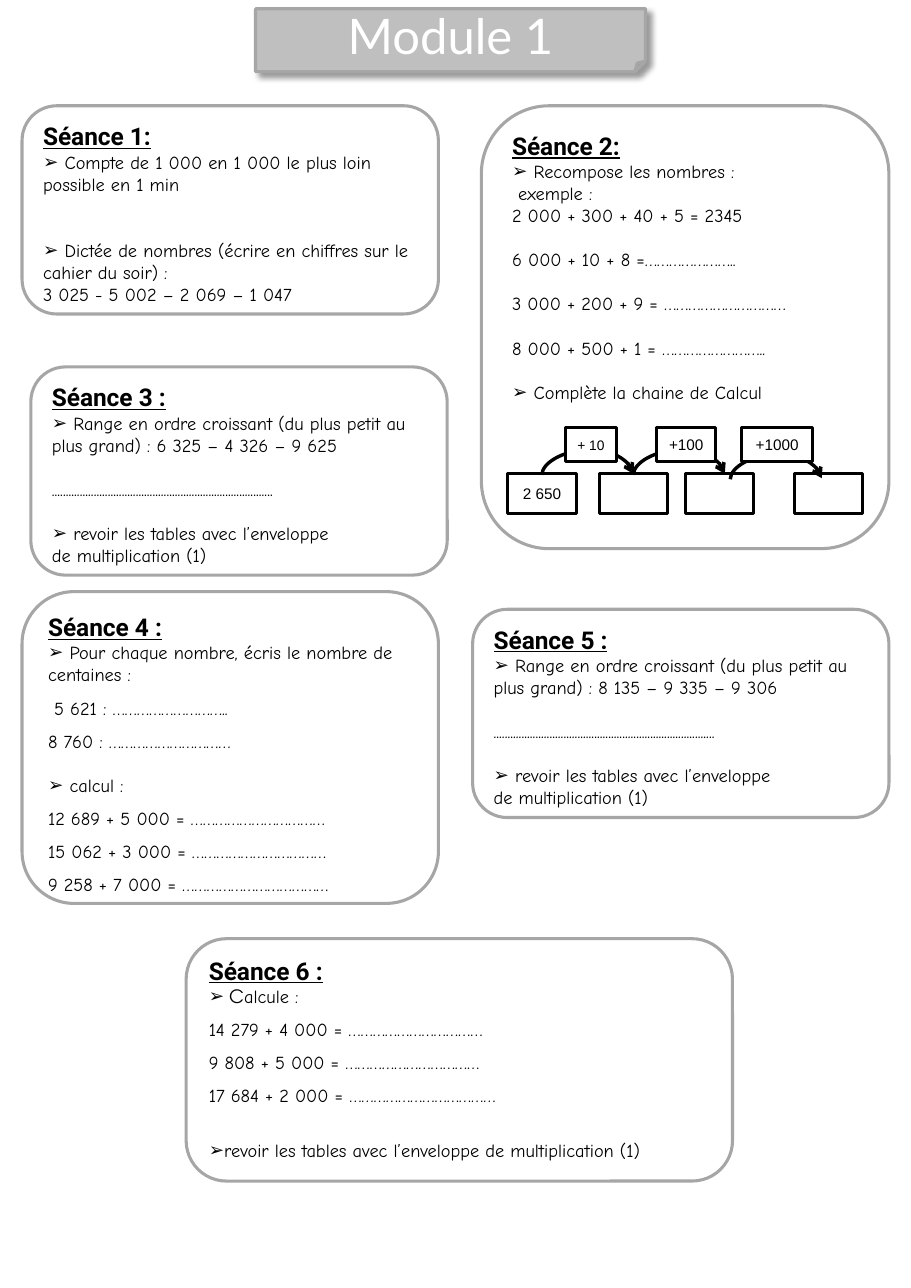
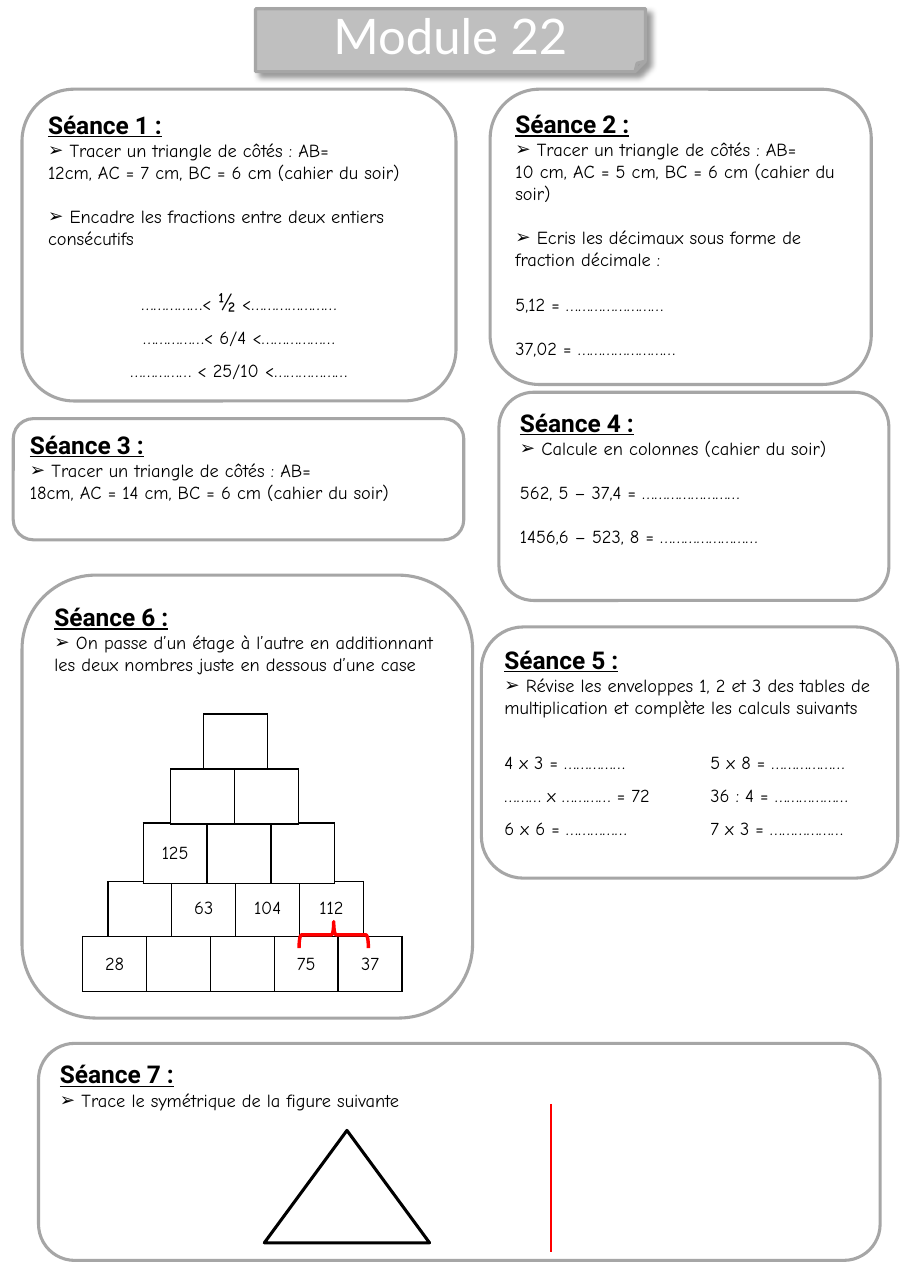
from dataclasses import dataclass

from lxml import etree
from pptx import Presentation
from pptx import util as u
from pptx.dml.color import RGBColor
from pptx.enum import shapes, text
from pptx.oxml import ns


@dataclass(frozen=True)
class Theme:
    black: RGBColor = RGBColor(0, 0, 0)
    white: RGBColor = RGBColor(255, 255, 255)
    red: RGBColor = RGBColor(255, 0, 0)
    band: RGBColor = RGBColor(0xBF, 0xBF, 0xBF)
    border: RGBColor = RGBColor(0xA6, 0xA6, 0xA6)
    title_font: str = "Lato"
    heading_font: str = "Roboto"
    body_font: str = "Comic Neue"
    accent_font: str = "TeX Gyre Adventor"
    chain_font: str = "Arial"
    title_size: int = 32
    heading_size: int = 16
    body_size: int = 12
    chain_size: int = 10
    blank_line: float = 14.4


theme = Theme()


def outline(shape, color, width, fill=None):
    """Set line and fill, and drop the inherited shadow."""
    shape.shadow.inherit = False
    shape.line.color.rgb = color
    shape.line.width = u.Pt(width)
    if fill is None:
        shape.fill.background()
    else:
        shape.fill.solid()
        shape.fill.fore_color.rgb = fill


def set_font(paragraph, name, size, color=theme.black):
    paragraph.font.name = name
    paragraph.font.size = u.Pt(size)
    paragraph.font.color.rgb = color


# Exercise text: (blank lines before, kind, text); "|" separates runs
revise = [(1, "bullet", " revoir les tables avec l’enveloppe"),
          (0, "plain", "de multiplication (1)")]
ranking, ranking_again = [
    [(0, "bullet", " Range en ordre croissant (du plus petit au plus grand) : " + numbers),
     (1, "plain", "." * 79)] + revise
    for numbers in ("6 325 – 4 326 – 9 625", "8 135 – 9 335 – 9 306")]
run_accents = {"½": (theme.body_font, 16), " C": (theme.accent_font, 12)}

# Modules: title, then (position, heading, exercises) for each session
modules = [
    ("Module 1", [
        ((0.2, 0.96, 3.78, 1.89), "Séance 1:", [
            (0, "bullet", " Compte de 1 000 en 1 000 le plus loin possible en 1 min"),
            (2, "bullet", " Dictée de nombres (écrire en chiffres sur le cahier du soir) :"),
            (0, "plain", "3 025 - 5 002 – 2 069 – 1 047")]),
        ((4.37, 0.96, 3.7, 4.02), "Séance 2:", [
            (0, "bullet", " Recompose les nombres :"),
            (0, "plain", " exemple :"),
            (0, "plain", "2 000 + 300 + 40 + 5 = 2345"),
            (1, "plain", "6 000 + 10 + 8 =………………….."),
            (1, "plain", "3 000 + 200 + 9 = …………………………"),
            (1, "plain", "8 000 + 500 + 1 = …………………….."),
            (1, "bullet", " Complète la chaine de Calcul")]),
        ((0.28, 3.33, 3.78, 1.89), "Séance 3 :", ranking),
        ((0.2, 5.37, 3.78, 2.83), "Séance 4 :", [
            (0, "bullet", " Pour chaque nombre, écris le nombre de centaines :"),
            (0, "wide", " 5 621 : ……………………….."),
            (0, "wide", "8 760 : …………………………"),
            (1, "bullet", " calcul :"),
            (0, "wide", "12 689 + 5 000 = ……………………………"),
            (0, "wide", "15 062 + 3 000 = ……………………………"),
            (0, "wide", "9 258 + 7 000 = ………………………………")]),
        ((4.29, 5.53, 3.78, 1.89), "Séance 5 :", ranking_again),
        ((1.69, 8.52, 4.96, 2.2), "Séance 6 :", [
            (0, "bullet", " C|alcule :"),
            (0, "wide", "14 279 + 4 000 = ……………………………"),
            (0, "wide", "9 808 + 5 000 = ……………………………"),
            (0, "wide", "17 684 + 2 000 = ………………………………"),
            (1.5, "bullet", "revoir les tables avec l’enveloppe de multiplication (1)")]),
    ]),
    ("Module 22", [
        ((0.2, 0.81, 3.94, 2.83), "Séance 1 :", [
            (0, "bullet", " Tracer un triangle de côtés : AB="),
            (0, "plain", "12cm, AC = 7 cm, BC = 6 cm (cahier du soir)"),
            (1, "bullet", " Encadre les fractions entre deux entiers consécutifs"),
            (1, "centred", "……………< |½| <…………………"),
            (0, "centred", "……………< 6/4 <………………"),
            (0, "centred", "…………… < 25/10 <………………")]),
        ((4.45, 0.81, 3.46, 2.68), "Séance 2 :", [
            (0, "bullet", " Tracer un triangle de côtés : AB="),
            (0, "plain", "10 cm, AC = 5 cm, BC = 6 cm (cahier du soir)"),
            (1, "bullet", " Ecris les décimaux sous forme de fraction décimale :"),
            (1, "plain", "5,12 = ……………………"),
            (1, "plain", "37,02 = ……………………")]),
        ((4.53, 3.56, 3.54, 1.89), "Séance 4 :", [
            (0, "bullet", " Calcule en colonnes (cahier du soir)"),
            (1, "plain", "562, 5 – 37,4 = ……………………"),
            (1, "plain", "1456,6 – 523, 8 = ……………………")]),
        ((0.12, 3.8, 4.09, 1.1), "Séance 3 :", [
            (0, "bullet", " Tracer un triangle de côtés : AB="),
            (0, "plain", "18cm, AC = 14 cm, BC = 6 cm (cahier du soir)")]),
        ((0.2, 5.22, 4.09, 4.02), "Séance 6 :", [
            (0, "bullet", " On passe d’un étage à l’autre en additionnant "
                          "les deux nombres juste en dessous d’une case")]),
        ((4.37, 5.69, 3.78, 2.28), "Séance 5 :", [
            (0, "bullet", " Révise les enveloppes 1, 2 et 3 des tables de "
                          "multiplication et complète les calculs suivants"),
            (1, "wide", "4 x 3 = ……………\t5 x 8 = ………………"),
            (0, "wide", "……… x ………… = 72\t36 : 4 = ………………"),
            (0, "wide", "6 x 6 = ……………\t7 x 3 = ………………")]),
        ((0.35, 9.47, 7.64, 1.97), "Séance 7 :", [
            (0, "bullet", " Trace le symétrique de la figure suivante")]),
    ]),
]

prs = Presentation()
prs.slide_width, prs.slide_height = u.Inches(8.27), u.Inches(11.69)

for module_title, sessions in modules:
    slide = prs.slides.add_slide(prs.slide_layouts[5])

    # Title band with its soft shadow, behind the title
    band = slide.shapes.add_shape(shapes.MSO_SHAPE.FOLDED_CORNER, *map(u.Inches, (2.32, 0.08, 3.54, 0.57)))
    outline(band, theme.border, 2, theme.band)
    effects = band._element.spPr.find(ns.qn("a:effectLst"))
    shadow = etree.SubElement(effects, ns.qn("a:outerShdw"), blurRad="50800", dist="50800",
                              dir="2700000", algn="tl", rotWithShape="0")
    shade = etree.SubElement(shadow, ns.qn("a:prstClr"), val="black")
    etree.SubElement(shade, ns.qn("a:alpha"), val="40000")

    title = slide.shapes.title
    title.left, title.top, title.width, title.height = map(u.Inches, (2.32, 0.08, 3.54, 0.47))
    slide.shapes._spTree.append(title._element)
    title.text_frame.text = module_title
    title.text_frame.auto_size = text.MSO_AUTO_SIZE.NONE
    title.text_frame.vertical_anchor = text.MSO_ANCHOR.MIDDLE
    title.text_frame.paragraphs[0].alignment = text.PP_ALIGN.CENTER
    set_font(title.text_frame.paragraphs[0], theme.title_font, theme.title_size, theme.white)

    # Session panels
    for position, heading, exercises in sessions:
        panel = slide.shapes.add_shape(shapes.MSO_SHAPE.ROUNDED_RECTANGLE, *map(u.Inches, position))
        outline(panel, theme.border, 2)
        frame = panel.text_frame
        frame.word_wrap = True
        frame.vertical_anchor = text.MSO_ANCHOR.TOP
        heading_line = frame.paragraphs[0]
        heading_line.text = heading
        heading_line.alignment = text.PP_ALIGN.LEFT
        set_font(heading_line, theme.heading_font, theme.heading_size)
        heading_line.font.bold = heading_line.font.underline = True

        for blank_lines, kind, wording in exercises:
            exercise = frame.add_paragraph()
            exercise.alignment = text.PP_ALIGN.CENTER if kind == "centred" else text.PP_ALIGN.LEFT
            if kind in ("wide", "centred"):
                exercise.line_spacing = 1.5
            if blank_lines:
                exercise.space_before = u.Pt(blank_lines * theme.blank_line)
            properties = exercise._p.get_or_add_pPr()
            if kind == "bullet":
                etree.SubElement(properties, ns.qn("a:buFont"), typeface="Arial")
                etree.SubElement(properties, ns.qn("a:buChar"), char="➢")
            if "\t" in wording:
                tabs = etree.SubElement(properties, ns.qn("a:tabLst"))
                etree.SubElement(tabs, ns.qn("a:tab"), pos=str(u.Inches(1.87)), algn="l")
            set_font(exercise, theme.body_font, theme.body_size)
            for part in wording.split("|"):
                run = exercise.add_run()
                run.text = part
                if part in run_accents:
                    run.font.name, accent_size = run_accents[part]
                    run.font.size = u.Pt(accent_size)

calculation, geometry = prs.slides

# Calculation chain: arrows first, then the boxes over them
for left, start in ((4.92, 4.31), (5.75, 4.31), (6.63, 4.35)):
    centre, middle = left + 0.415, start - 0.005
    arrow = calculation.shapes.add_connector(
        shapes.MSO_CONNECTOR.CURVE, u.Inches(centre + 0.005), u.Inches(middle + 0.415),
        u.Inches(centre - 0.005), u.Inches(middle - 0.415))
    arrow.line.color.rgb = theme.black
    arrow.line.width = u.Pt(2.25)
    arrow_properties = arrow._element.spPr
    arrow_properties.find(ns.qn("a:xfrm")).set("rot", "5400000")
    adjustments = arrow_properties.find(ns.qn("a:prstGeom")).find(ns.qn("a:avLst"))
    etree.SubElement(adjustments, ns.qn("a:gd"), name="adj1", fmla="val 2285400")
    etree.SubElement(arrow.line._get_or_add_ln(), ns.qn("a:tailEnd"), type="arrow")
    etree.SubElement(arrow_properties, ns.qn("a:effectLst"))

number_boxes = [(left, 4.3, 0.62, 0.36, wording, theme.chain_size, None)
                for left, wording in ((4.61, "2 650"), (5.44, ""), (6.22, ""), (7.21, ""))]
step_boxes = [(left, 3.88, width, 0.31, wording, size, theme.white)
              for left, width, wording, size in ((5.13, 0.47, "+ 10", 9),
                                                 (5.96, 0.54, "+100", theme.chain_size),
                                                 (6.73, 0.65, "+1000", theme.chain_size))]
for *position, wording, size, fill in number_boxes + step_boxes:
    box = calculation.shapes.add_shape(shapes.MSO_SHAPE.RECTANGLE, *map(u.Inches, position))
    outline(box, theme.black, 2, fill)
    if wording:
        box.text_frame.text = wording
        box.text_frame.word_wrap = True
        box.text_frame.vertical_anchor = text.MSO_ANCHOR.MIDDLE
        box.text_frame.paragraphs[0].alignment = text.PP_ALIGN.CENTER
        set_font(box.text_frame.paragraphs[0], theme.chain_font, size)

# Number pyramid, one table per floor from the ground up
brick_width = 0.58
floors = [(0.75, 8.5, 0.5, ("28", "", "", "75", "37")),
          (0.98, 8, 0.5, ("", "63", "104", "112")),
          (1.3, 7.47, 0.55, ("125", "", "")),
          (1.55, 6.98, 0.5, ("", "")),
          (1.85, 6.48, 0.5, ("",))]
for left, top, height, numbers in floors:
    floor = geometry.shapes.add_table(1, len(numbers), u.Inches(left), u.Inches(top),
                                      u.Inches(brick_width * len(numbers)), u.Inches(height)).table
    floor.first_row = floor.horz_banding = False
    for brick, number in zip(floor.rows[0].cells, numbers):
        brick.text = number
        brick.vertical_anchor = text.MSO_ANCHOR.MIDDLE
        brick.text_frame.paragraphs[0].alignment = text.PP_ALIGN.CENTER
        set_font(brick.text_frame.paragraphs[0], theme.body_font, theme.body_size)
        brick_properties = brick._tc.get_or_add_tcPr()
        for side in ("a:lnL", "a:lnR", "a:lnT", "a:lnB"):
            edge = etree.SubElement(brick_properties, ns.qn(side), w=str(u.Pt(1)))
            edge_fill = etree.SubElement(edge, ns.qn("a:solidFill"))
            etree.SubElement(edge_fill, ns.qn("a:srgbClr"), val=str(theme.black))
        brick.fill.solid()
        brick.fill.fore_color.rgb = theme.white

brace = geometry.shapes.add_shape(shapes.MSO_SHAPE.RIGHT_BRACE, *map(u.Inches, (2.91, 8.17, 0.24, 0.63)))
brace.rotation = 270
outline(brace, theme.red, 2.25)

# Symmetry figure and its axis
triangle = geometry.shapes.add_shape(shapes.MSO_SHAPE.ISOSCELES_TRIANGLE,
                                     *map(u.Inches, (2.4, 10.26, 1.5, 1.02)))
outline(triangle, theme.black, 2, theme.white)
axis = geometry.shapes.add_connector(shapes.MSO_CONNECTOR.STRAIGHT, *map(u.Inches, (5, 10.02, 5, 11.36)))
axis.line.color.rgb = theme.red
axis.line.width = u.Pt(1.5)
etree.SubElement(axis._element.spPr, ns.qn("a:effectLst"))

prs.save("out.pptx")
